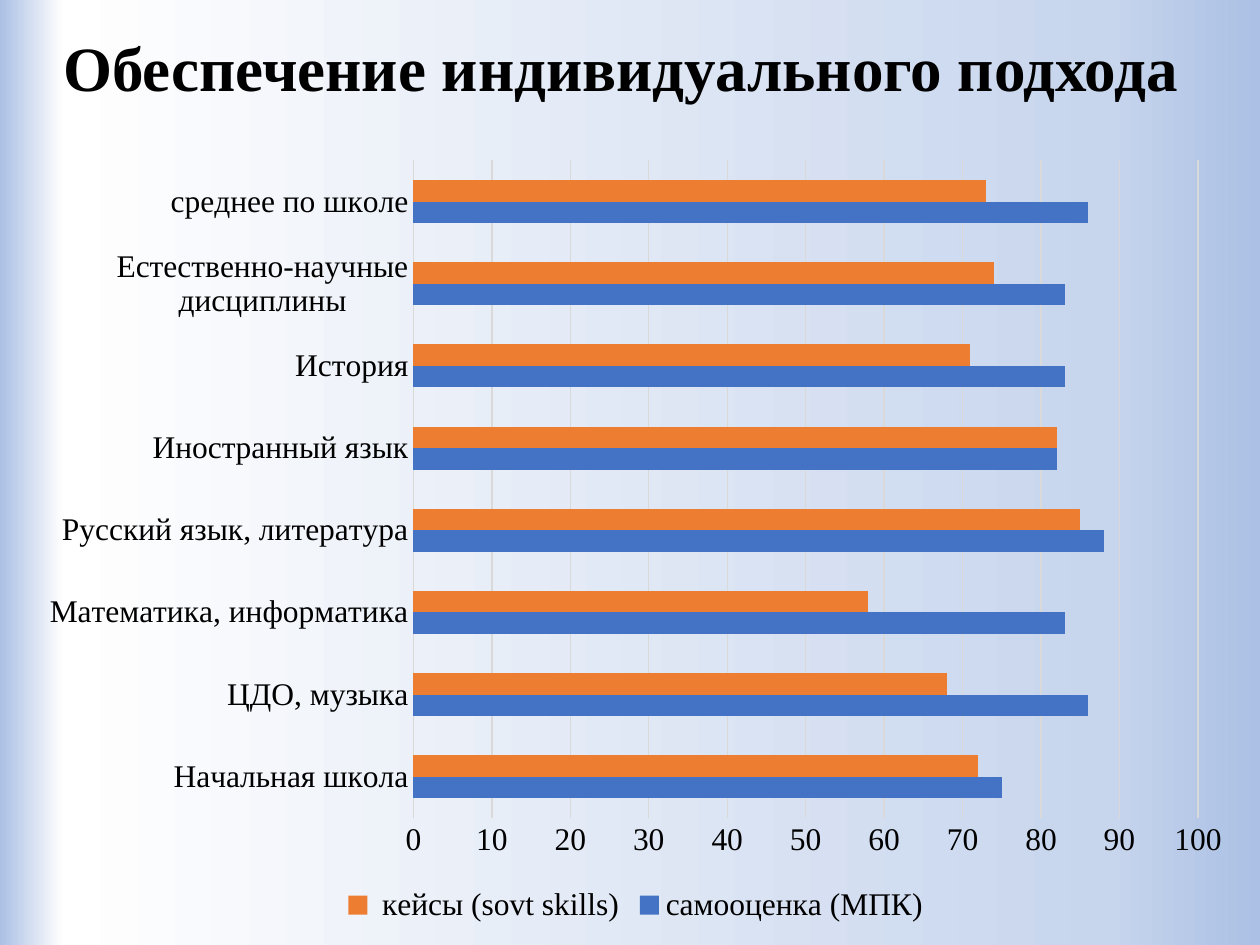
from copy import deepcopy
from pptx import Presentation
from pptx.chart.data import CategoryChartData as Data
from pptx.dml.color import RGBColor as Rgb
from pptx.enum.chart import XL_CHART_TYPE as Kind, XL_LEGEND_POSITION as Side, XL_TICK_MARK as Tick
from pptx.enum.text import MSO_ANCHOR as Anchor, PP_ALIGN as Align
from pptx.oxml.ns import qn
from pptx.util import Cm, Pt

TITLE = "Обеспечение индивидуального подхода"
ROWS = [
    ("Начальная школа", 75, 72),
    ("ЦДО, музыка", 86, 68),
    ("Математика, информатика", 83, 58),
    ("Русский язык, литература", 88, 85),
    ("Иностранный язык", 82, 82),
    ("История", 83, 71),
    ("Естественно-научные дисциплины", 83, 74),
    ("среднее по школе", 86, 73),
]
SERIES = [("самооценка (МПК)", "blue"), (" кейсы (sovt skills)", "orange")]
COLORS = {"blue": "4472C4", "orange": "ED7D31", "text": "000000", "grid": "D9D9D9",
          "edge": "ABC0E4", "pale": "C7D5ED", "white": "FFFFFF"}
STOPS = [(0, "edge"), (12, "pale"), (95, "white"), (100, "edge")]
FONT = "Times New Roman"


def color(name):
    return Rgb.from_string(COLORS[name])


def style(font, size, bold=False):
    font.name = FONT
    font.size = Pt(size)
    font.bold = bold
    font.color.rgb = color("text")


def rule(line):
    line.color.rgb = color("grid")
    line.width = Pt(0.75)


def paint(slide):
    fill = slide.background.fill
    fill.gradient()
    fill.gradient_angle = 180
    stops = next(slide.element.iter(qn("a:gsLst")))
    for _ in range(len(STOPS) - len(stops)):
        stops.append(deepcopy(stops[0]))
    for stop, (place, name) in zip(fill.gradient_stops, STOPS):
        stop.position = place / 100
        stop.color.rgb = color(name)


def head(slide):
    title = slide.shapes.title
    title.left, title.top, title.width, title.height = Cm(1.02), Cm(0.33), Cm(23.34), Cm(2.21)
    frame = title.text_frame
    frame.text = TITLE
    frame.word_wrap = True
    frame.vertical_anchor = Anchor.MIDDLE
    para = frame.paragraphs[0]
    para.alignment = Align.LEFT
    para.line_spacing = 0.9
    style(para.font, 36, True)


def graph(slide):
    names, *cols = zip(*ROWS)
    data = Data()
    data.categories = names
    for (name, _), vals in zip(SERIES, cols):
        data.add_series(name, vals)
    chart = slide.shapes.add_chart(Kind.BAR_CLUSTERED, Cm(0.51), Cm(2.92),
                                   Cm(24.61), Cm(15.8), data).chart
    style(chart.font, 18)
    chart.has_title = False
    chart.has_legend = True
    chart.legend.position = Side.BOTTOM
    chart.legend.include_in_layout = False
    style(chart.legend.font, 18)

    plot = chart.plots[0]
    plot.gap_width = 182
    plot.overlap = 0
    plot.vary_by_categories = False
    for series, (_, name) in zip(plot.series, SERIES):
        series.format.fill.solid()
        series.format.fill.fore_color.rgb = color(name)

    cat, val = chart.category_axis, chart.value_axis
    for axis in (cat, val):
        axis.major_tick_mark = axis.minor_tick_mark = Tick.NONE
        style(axis.tick_labels.font, 18)
    cat.has_major_gridlines = False
    rule(cat.format.line)
    val.minimum_scale, val.maximum_scale, val.major_unit = 0, 100, 10
    val.has_major_gridlines = True
    rule(val.major_gridlines.format.line)
    val.format.line.fill.background()


def main():
    deck = Presentation()
    deck.slide_width, deck.slide_height = Cm(25.4), Cm(19.05)
    slide = deck.slides.add_slide(deck.slide_layouts[5])
    paint(slide)
    head(slide)
    graph(slide)
    deck.save("out.pptx")


if __name__ == "__main__":
    main()
